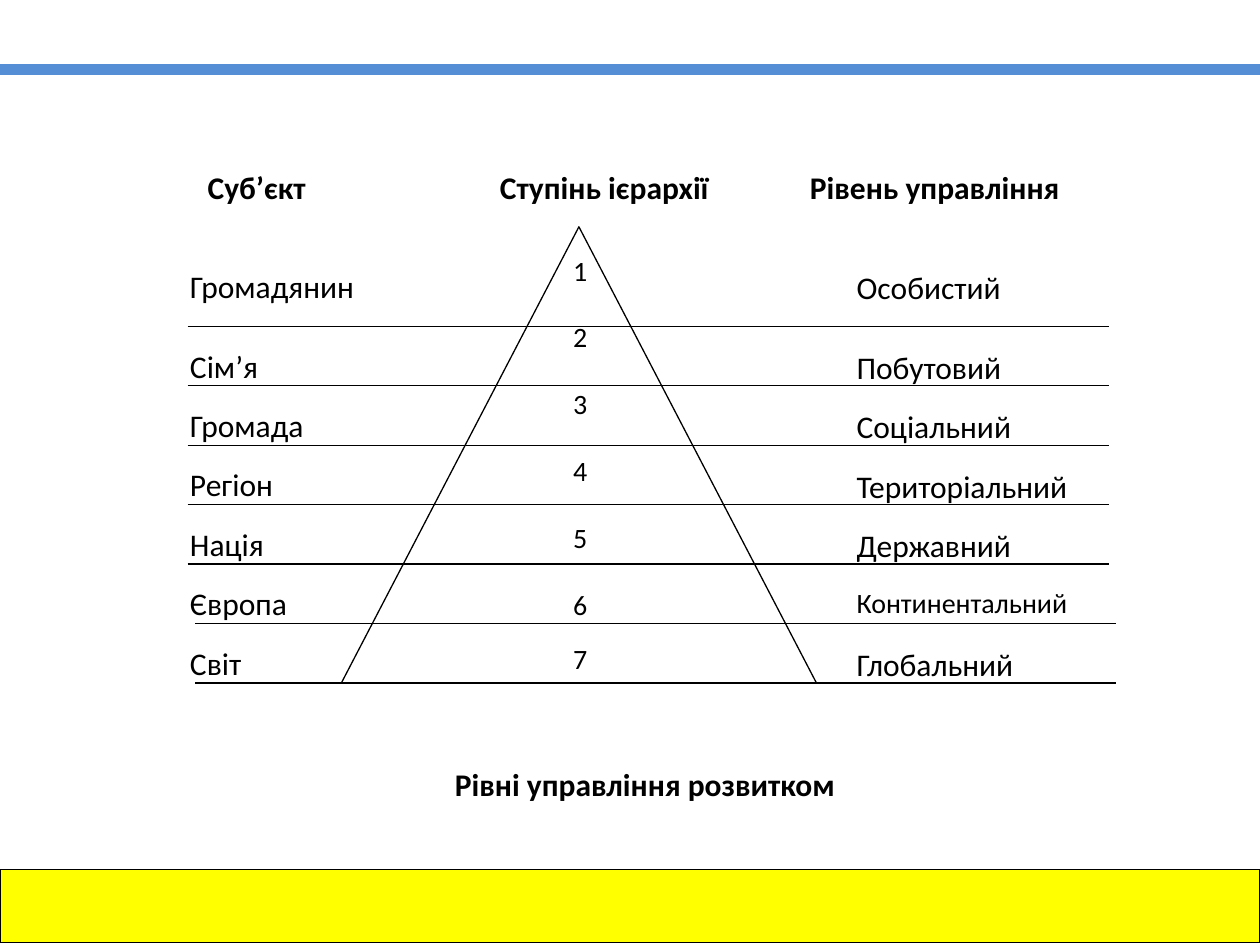
from dataclasses import dataclass

from pptx import Presentation
from pptx.dml.color import RGBColor
from pptx.enum.shapes import MSO_CONNECTOR, MSO_SHAPE
from pptx.enum.text import PP_ALIGN
from pptx.oxml.ns import qn
from pptx.util import Inches, Pt

BLACK = RGBColor(0x00, 0x00, 0x00)
BLUE = RGBColor(0x55, 0x8E, 0xD5)
YELLOW = RGBColor(0xFF, 0xFF, 0x00)
FONT = "Calibri"
STRAIGHT = MSO_CONNECTOR.STRAIGHT
RECTANGLE = MSO_SHAPE.RECTANGLE
TRIANGLE = MSO_SHAPE.ISOSCELES_TRIANGLE
LEFT, CENTER = PP_ALIGN.LEFT, PP_ALIGN.CENTER

SLIDE_WIDTH, SLIDE_HEIGHT = 10, 7.5
FIRST_RULE, LAST_RULE = 2.59, 5.42
TEXT_OFFSET = 0.16  # from a rule down to the text of the next row
FIRST_TEXT_TOP = 2.12
RULE_WIDTH = 7.31
SUBJECT_LEFT, LEVEL_LEFT = 1.41, 6.7
HEADING_TOP, TEXT_HEIGHT = 1.33, 0.32


@dataclass(frozen=True)
class Level:
    subject: str
    management: str
    management_size: int = 18
    rule_left: float = 1.49


@dataclass(frozen=True)
class Heading:
    text: str
    left: float
    width: float


LEVELS = [
    Level("Громадянин", "Особистий"),
    Level("Сім’я", "Побутовий"),
    Level("Громада", "Соціальний"),
    Level("Регіон", "Територіальний"),
    Level("Нація", "Державний"),
    Level("Європа", "Континентальний", management_size=16, rule_left=1.55),
    Level("Світ", "Глобальний", rule_left=1.55),
]
HEADINGS = [
    Heading("Суб’єкт", 1.55, 1.74),
    Heading("Ступінь ієрархії", 3.87, 2.46),
    Heading("Рівень управління", 6.33, 2.46),
]
ROW_HEIGHT = (LAST_RULE - FIRST_RULE) / (len(LEVELS) - 1)


def add_rule(slide, left: float, top: float, width: float,
             color: RGBColor = BLACK, weight: float = 0.75) -> None:
    rule = slide.shapes.add_connector(
        STRAIGHT, Inches(left), Inches(top), Inches(left + width), Inches(top))
    rule.line.color.rgb = color
    rule.line.width = Pt(weight)
    properties = rule._element.spPr
    properties.append(properties.makeelement(qn("a:effectLst"), {}))


def add_outlined_shape(slide, kind, left: float, top: float, width: float,
                       height: float, fill: RGBColor | None = None) -> None:
    shape = slide.shapes.add_shape(
        kind, Inches(left), Inches(top), Inches(width), Inches(height))
    shape.shadow.inherit = False
    shape.line.color.rgb = BLACK
    shape.line.width = Pt(0.75)
    if fill is None:
        shape.fill.background()
    else:
        shape.fill.solid()
        shape.fill.fore_color.rgb = fill


def add_text(slide, lines: list[str], left: float, top: float, width: float,
             height: float = TEXT_HEIGHT, size: int = 18, bold: bool = False,
             alignment=LEFT, margin: float = 0):
    """Add a text box with one paragraph a line and return its paragraphs."""
    frame = slide.shapes.add_textbox(
        Inches(left), Inches(top), Inches(width), Inches(height)).text_frame
    frame.word_wrap = True
    frame.margin_top = frame.margin_bottom = Inches(margin)
    frame.text = "\n".join(lines)
    for paragraph in frame.paragraphs:
        paragraph.alignment = alignment
        paragraph.font.name = FONT
        paragraph.font.size = Pt(size)
        paragraph.font.bold = bold
        paragraph.font.color.rgb = BLACK
    return frame.paragraphs


def add_level(slide, row: int, level: Level) -> None:
    rule_top = FIRST_RULE + row * ROW_HEIGHT
    text_top = rule_top - ROW_HEIGHT + TEXT_OFFSET if row else FIRST_TEXT_TOP
    add_rule(slide, level.rule_left, rule_top, RULE_WIDTH)
    add_text(slide, [level.subject], SUBJECT_LEFT, text_top, 3.33)
    add_text(slide, [level.management], LEVEL_LEFT, text_top + 0.01, 1.95,
             size=level.management_size)


def add_step_numbers(slide) -> None:
    numbers = [str(row + 1) for row in range(len(LEVELS))]
    paragraphs = add_text(slide, numbers, 4.45, 1.96, 0.43, 3.47,
                          size=16, margin=0.05)
    for paragraph in paragraphs[1:-1]:
        paragraph.space_before = Pt(19)
    paragraphs[-1].space_before = Pt(12)


def main() -> None:
    presentation = Presentation()
    presentation.slide_width = Inches(SLIDE_WIDTH)
    presentation.slide_height = Inches(SLIDE_HEIGHT)
    slide = presentation.slides.add_slide(presentation.slide_layouts[6])

    add_outlined_shape(slide, RECTANGLE, 0, 6.9, SLIDE_WIDTH, 0.58, YELLOW)
    add_rule(slide, 0, 0.55, SLIDE_WIDTH, BLUE, 6)
    for row, level in enumerate(LEVELS):
        add_level(slide, row, level)
    add_outlined_shape(slide, TRIANGLE, 2.71, 1.8, 3.77, LAST_RULE - 1.8)
    add_step_numbers(slide)
    for heading in HEADINGS:
        add_text(slide, [heading.text], heading.left, HEADING_TOP,
                 heading.width, bold=True)
    add_text(slide, ["Рівні управління розвитком"], 0.55, 6.02, 9.14, 0.51,
             bold=True, alignment=CENTER, margin=0.05)
    presentation.save("out.pptx")


if __name__ == "__main__":
    main()
